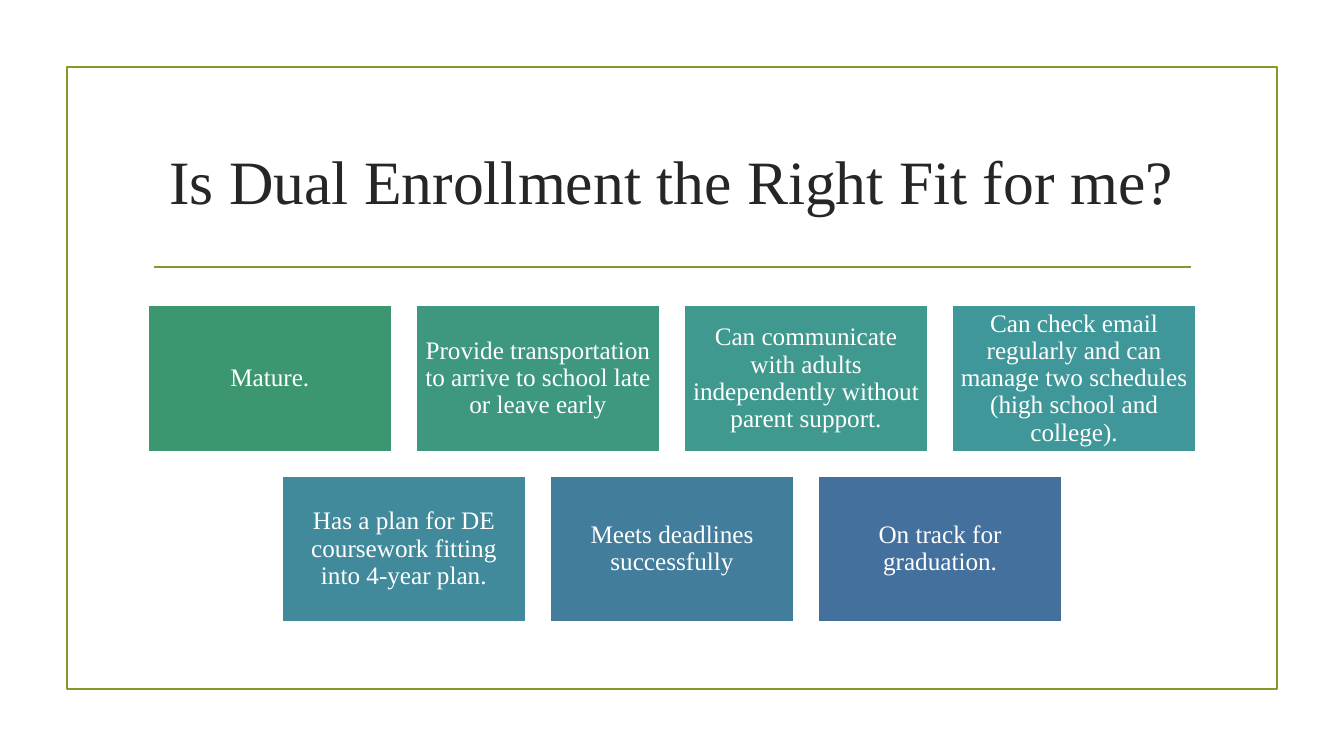
"""Builds a slide of seven readiness cards for dual enrollment."""
import pptx
import pptx.util
import pptx.dml.color
import pptx.enum.shapes
import pptx.enum.text
import lxml.etree

Pt = pptx.util.Pt
RGB = pptx.dml.color.RGBColor.from_string
KIND = pptx.enum.shapes.MSO_SHAPE.RECTANGLE
HUES = {"olive": "83992A", "ink": "262626", "white": "FFFFFF"}
WIDE, HIGH, STEP, DROP = 174.24, 104.4, 191.5, 121.7
TOP = 218.2

deck = pptx.Presentation()
deck.slide_width, deck.slide_height = Pt(960), Pt(540)
slide = deck.slides.add_slide(deck.slide_layouts[6])
shapes = slide.shapes


def write(shape, text, size, hue, inset, space):
    frame = shape.text_frame
    frame.word_wrap = True
    frame.vertical_anchor = pptx.enum.text.MSO_ANCHOR.MIDDLE
    frame.margin_left = frame.margin_right = Pt(inset)
    frame.margin_top = frame.margin_bottom = Pt(5)
    para = frame.paragraphs[0]
    para.alignment = pptx.enum.text.PP_ALIGN.CENTER
    para.line_spacing = space
    run = para.add_run()
    run.text = text
    run.font.name = "Times New Roman"
    run.font.size = Pt(size)
    run.font.color.rgb = RGB(hue)


def box(left, top, wide, high, line, fill=None):
    shape = shapes.add_shape(KIND, Pt(left), Pt(top), Pt(wide), Pt(high))
    shape.shadow.inherit = False
    if fill:
        shape.fill.solid()
        shape.fill.fore_color.rgb = RGB(fill)
    else:
        shape.fill.background()
    shape.line.color.rgb = RGB(line)
    shape.line.width = Pt(1.25)
    return shape


box(48, 48, 864, 444, HUES["olive"])

rule = shapes.add_connector(
    pptx.enum.shapes.MSO_CONNECTOR.STRAIGHT, Pt(110), Pt(190.8), Pt(850.5), Pt(190.8))
rule.line.color.rgb = RGB(HUES["olive"])
rule.line.width = Pt(1.25)
lxml.etree.SubElement(rule._element.spPr, pptx.oxml.ns.qn("a:effectLst"))

title = shapes.add_textbox(Pt(102), Pt(77.2), Pt(756), Pt(103))
write(title, "Is Dual Enrollment the Right Fit for me?",
      size=44, hue=HUES["ink"], inset=7.2, space=1)

rows = [
    [("Mature.", "3C9770"),
     ("Provide transportation to arrive to school late or leave early", "3D987F"),
     ("Can communicate with adults independently without parent support.", "3F998E"),
     ("Can check email regularly and can manage two schedules "
      "(high school and college).", "40979A")],
    [("Has a plan for DE coursework fitting into 4-year plan.", "418A9B"),
     ("Meets deadlines successfully", "437D9C"),
     ("On track for graduation.", "44709D")],
]
for i, row in enumerate(rows):
    start = 480 - ((len(row) - 1) * STEP + WIDE) / 2
    for j, (text, fill) in enumerate(row):
        card = box(start + j * STEP, TOP + i * DROP, WIDE, HIGH, HUES["white"], fill)
        write(card, text, size=18, hue=HUES["white"], inset=5, space=0.9)

deck.save("out.pptx")
